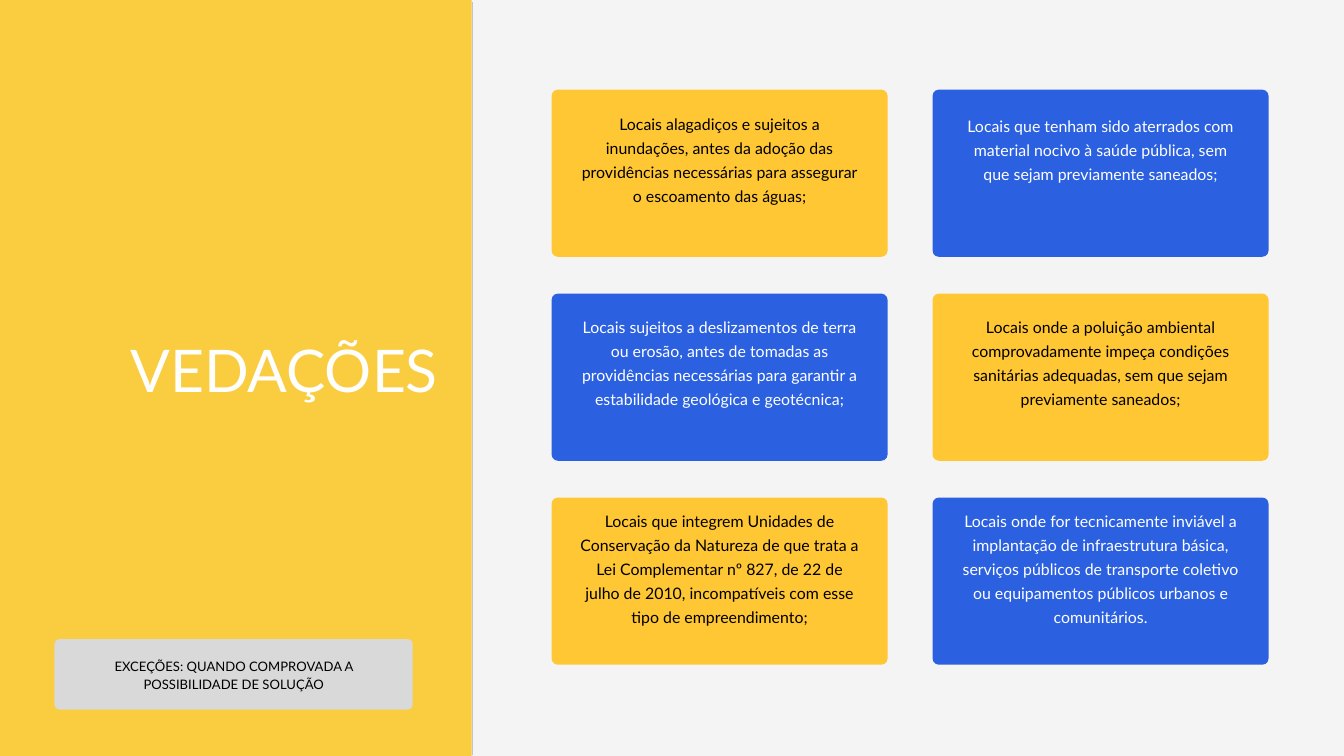
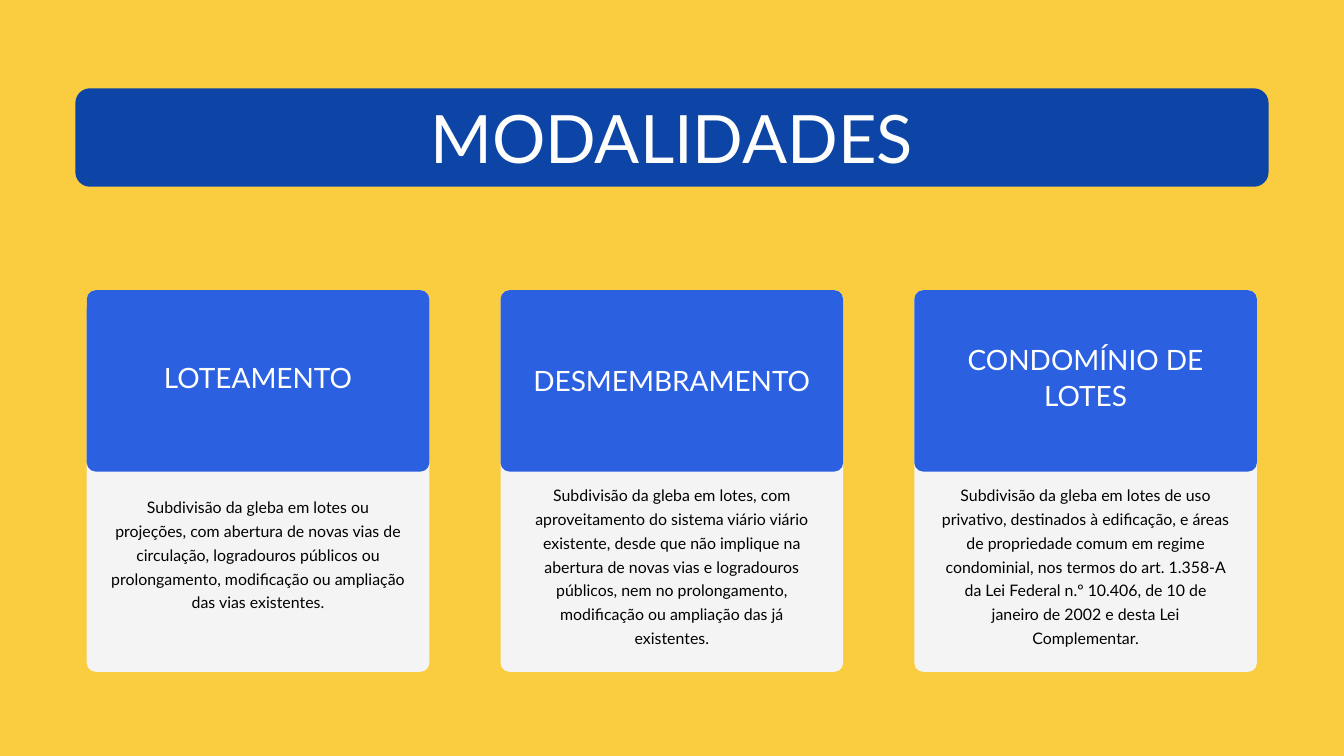
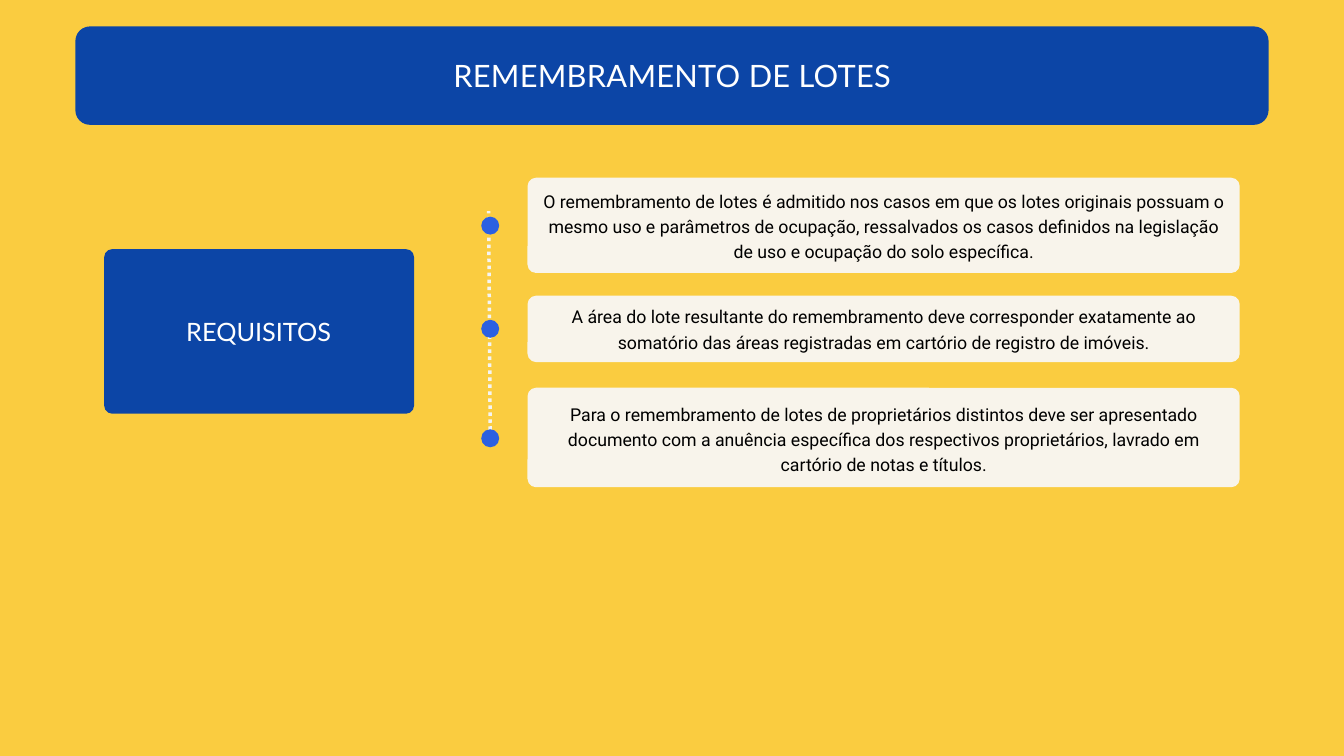
from lxml.etree import SubElement
from pptx import Presentation
from pptx.dml.color import RGBColor
from pptx.enum.dml import MSO_LINE
from pptx.enum.shapes import MSO_CONNECTOR, MSO_SHAPE as Preset
from pptx.enum.text import MSO_ANCHOR, MSO_AUTO_SIZE, PP_ALIGN as Align
from pptx.oxml.ns import qn
from pptx.util import Cm, Pt

YELLOW = RGBColor(0xFA, 0xCC, 0x40)
AMBER = RGBColor(0xFF, 0xC7, 0x33)
BLUE = RGBColor(0x2B, 0x60, 0xE1)
NAVY = RGBColor(0x0C, 0x45, 0xA6)
LIGHT = RGBColor(0xF4, 0xF4, 0xF4)
CREAM = RGBColor(0xF8, 0xF4, 0xEB)
GREY = RGBColor(0xD9, 0xD9, 0xD9)
WHITE = RGBColor(0xFF, 0xFF, 0xFF)
TITLE_WHITE = RGBColor(0xFE, 0xFE, 0xFD)
BLACK = RGBColor(0, 0, 0)

BANNER_LEFT, BANNER_WIDTH, BANNER_HEIGHT, BANNER_RADIUS = 2.85, 45.1, 3.72, 0.55


def block(slide, left, top, width, height, fill, radius=None):
    """Draw a plain rounded rectangle, or an oval when no radius is given."""
    preset = Preset.ROUNDED_RECTANGLE if radius else Preset.OVAL
    shape = slide.shapes.add_shape(preset, Cm(left), Cm(top), Cm(width), Cm(height))
    if radius:
        shape.adjustments[0] = radius / min(width, height)
    shape.fill.solid()
    shape.fill.fore_color.rgb = fill
    shape.line.fill.background()
    shape.shadow.inherit = False
    return shape


def write(slide, text, left, top, width, height, *, size, spacing, color=BLACK,
          font="Lato", align=Align.CENTER, title=False):
    """Put text in a new box, or in the slide's title placeholder."""
    place = Cm(left), Cm(top), Cm(width), Cm(height)
    holder = slide.shapes.title if title else slide.shapes.add_textbox(*place)
    holder.left, holder.top, holder.width, holder.height = place
    frame = holder.text_frame
    frame.word_wrap = True
    frame.auto_size = MSO_AUTO_SIZE.NONE
    frame.vertical_anchor = MSO_ANCHOR.TOP
    frame.margin_left = frame.margin_top = frame.margin_right = frame.margin_bottom = 0
    paragraph = frame.paragraphs[0]
    paragraph.alignment = align
    paragraph.line_spacing = Pt(spacing)
    run = paragraph.add_run()
    run.text = text
    run.font.name = font
    run.font.size = Pt(size)
    run.font.color.rgb = color
    return holder


prs = Presentation()
prs.slide_width, prs.slide_height = Cm(50.8), Cm(28.58)
prohibitions, modalities, merging = [prs.slides.add_slide(prs.slide_layouts[5]) for _ in range(3)]
for slide, background in ((prohibitions, LIGHT), (modalities, YELLOW), (merging, YELLOW)):
    slide.background.fill.solid()
    slide.background.fill.fore_color.rgb = background

# Slide 1: side panel with title and exception note
panel_edge = prohibitions.shapes.add_connector(
    MSO_CONNECTOR.STRAIGHT, Cm(17.85), Cm(28.55), Cm(17.85), Cm(0.08))
panel = block(prohibitions, -1.37, -1.09, 19.2, 30.07, YELLOW, radius=0.25)
heading = write(prohibitions, "VEDAÇÕES", 4.93, 12.6, 14.35, 2.67, size=63, spacing=75.6,
                color=TITLE_WHITE, align=Align.LEFT, title=True)
panel.element.addnext(heading.element)
block(prohibitions, 2.06, 24.16, 13.54, 2.67, GREY, radius=0.2)
write(prohibitions, "EXCEÇÕES: QUANDO COMPROVADA A POSSIBILIDADE DE SOLUÇÃO",
      2.67, 24.79, 12.34, 1.35, size=14, spacing=19.6)

# Slide 1: checkerboard of prohibited places, each with its text top
places = [
    ("Locais alagadiços e sujeitos a inundações, antes da adoção das providências "
     "necessárias para assegurar o escoamento das águas;", 4.17),
    ("Locais que tenham sido aterrados com material nocivo à saúde pública, sem que sejam "
     "previamente saneados;", 4.24),
    ("Locais sujeitos a deslizamentos de terra ou erosão, antes de tomadas as providências "
     "necessárias para garantir a estabilidade geológica e geotécnica;", 11.84),
    ("Locais onde a poluição ambiental comprovadamente impeça condições sanitárias "
     "adequadas, sem que sejam previamente saneados;", 11.84),
    ("Locais que integrem Unidades de Conservação da Natureza de que trata a Lei "
     "Complementar nº 827, de 22 de julho de 2010, incompatíveis com esse tipo de "
     "empreendimento;", 19.18),
    ("Locais onde for tecnicamente inviável a implantação de infraestrutura básica, "
     "serviços públicos de transporte coletivo ou equipamentos públicos urbanos e "
     "comunitários.", 19.18),
]
for index, (place, text_top) in enumerate(places):
    row, column = divmod(index, 2)
    fill, color = (BLUE, WHITE) if (row + column) % 2 else (AMBER, BLACK)
    left = 20.85 + 14.4 * column
    block(prohibitions, left, 3.39 + 7.71 * row, 12.7, 6.32, fill, radius=0.24)
    write(prohibitions, place, left + 1.08, text_top, 10.54, 5.4,
          size=17, spacing=25.5, color=color)

# Slide 2: title banner
banner = block(modalities, BANNER_LEFT, 3.34, BANNER_WIDTH, BANNER_HEIGHT, NAVY, BANNER_RADIUS)
heading = write(modalities, "MODALIDADES", 3.28, 3.66, 44.22, 3.05, size=71.5, spacing=85.8,
                color=TITLE_WHITE, title=True)
banner.element.addnext(heading.element)

# Slide 2: name, name top, description, description top, text width
kinds = [
    ("LOTEAMENTO", 13.51,
     "Subdivisão da gleba em lotes ou projeções, com abertura de novas vias de circulação, "
     "logradouros públicos ou prolongamento, modificação ou ampliação das vias existentes.",
     18.64, 11.13),
    ("DESMEMBRAMENTO", 13.64,
     "Subdivisão da gleba em lotes, com aproveitamento do sistema viário viário existente, "
     "desde que não implique na abertura de novas vias e logradouros públicos, nem no "
     "prolongamento, modificação ou ampliação das já existentes.",
     18.19, 10.8),
    ("CONDOMÍNIO DE LOTES", 12.83,
     "Subdivisão da gleba em lotes de uso privativo, destinados à edificação, e áreas de "
     "propriedade comum em regime condominial, nos termos do art. 1.358-A da Lei Federal "
     "n.º 10.406, de 10 de janeiro de 2002 e desta Lei Complementar.",
     18.19, 10.9),
]
kind_width = 12.95
for column, (kind, kind_top, description, description_top, text_width) in enumerate(kinds):
    left = 3.28 + 15.64 * column
    text_left = left + (kind_width - text_width) / 2
    block(modalities, left, 10.97, kind_width, 14.43, LIGHT, radius=0.34)
    write(modalities, description, text_left, description_top, text_width, 6.3,
          size=17, spacing=25.5)
    block(modalities, left, 10.97, kind_width, 6.86, BLUE, radius=0.34)
    write(modalities, kind, text_left, kind_top, text_width, 1.4,
          size=30, spacing=39, color=WHITE)

# Slide 3: title banner
banner = block(merging, BANNER_LEFT, 1, BANNER_WIDTH, BANNER_HEIGHT, NAVY, BANNER_RADIUS)
heading = write(merging, "REMEMBRAMENTO DE LOTES", 5.03, 2.03, 40.77, 1.52, size=33,
                spacing=42.9, color=WHITE, title=True)
next(heading.element.iter(qn("a:rPr"))).set("spc", "30")
banner.element.addnext(heading.element)

# Slide 3: requirements along a dotted timeline
block(merging, 3.94, 9.42, 11.71, 6.22, NAVY, radius=0.3)
write(merging, "REQUISITOS", 4.75, 11.86, 10.06, 1.24, size=27.1, spacing=35.2, color=WHITE)
timeline = merging.shapes.add_connector(
    MSO_CONNECTOR.STRAIGHT, Cm(18.53), Cm(16.51), Cm(18.47), Cm(7.98))

# Requirement, card top, card height, text top, dot top
requirements = [
    ("O remembramento de lotes é admitido nos casos em que os lotes originais possuam o "
     "mesmo uso e parâmetros de ocupação, ressalvados os casos definidos na legislação de "
     "uso e ocupação do solo específica.", 6.72, 3.6, 7.06, 8.19),
    ("A área do lote resultante do remembramento deve corresponder exatamente ao somatório "
     "das áreas registradas em cartório de registro de imóveis.", 11.18, 2.51, 11.43, 12.09),
    ("Para o remembramento de lotes de proprietários distintos deve ser apresentado "
     "documento com a anuência específica dos respectivos proprietários, lavrado em "
     "cartório de notas e títulos.", 14.66, 3.76, 15.11, 16.23),
]
for requirement, top, height, text_top, dot_top in requirements:
    block(merging, 19.94, top, 26.92, height, CREAM, radius=0.32)
    block(merging, 18.19, dot_top, 0.68, 0.68, BLUE)
    write(merging, requirement, 20.5, text_top, 25.81, 2.8, size=19, spacing=27, font="Roboto")

# Line styles
for rule, color, width, dash in ((panel_edge, BLACK, 0.75, MSO_LINE.SOLID),
                                 (timeline, LIGHT, 3.75, MSO_LINE.ROUND_DOT)):
    rule.line.color.rgb = color
    rule.line.width = Pt(width)
    rule.line.dash_style = dash
    SubElement(rule.element.spPr, qn("a:effectLst"))
edge_color = next(panel_edge.element.spPr.iter(qn("a:srgbClr")))
SubElement(edge_color, qn("a:alpha")).set("val", "30000")

prs.save("out.pptx")
